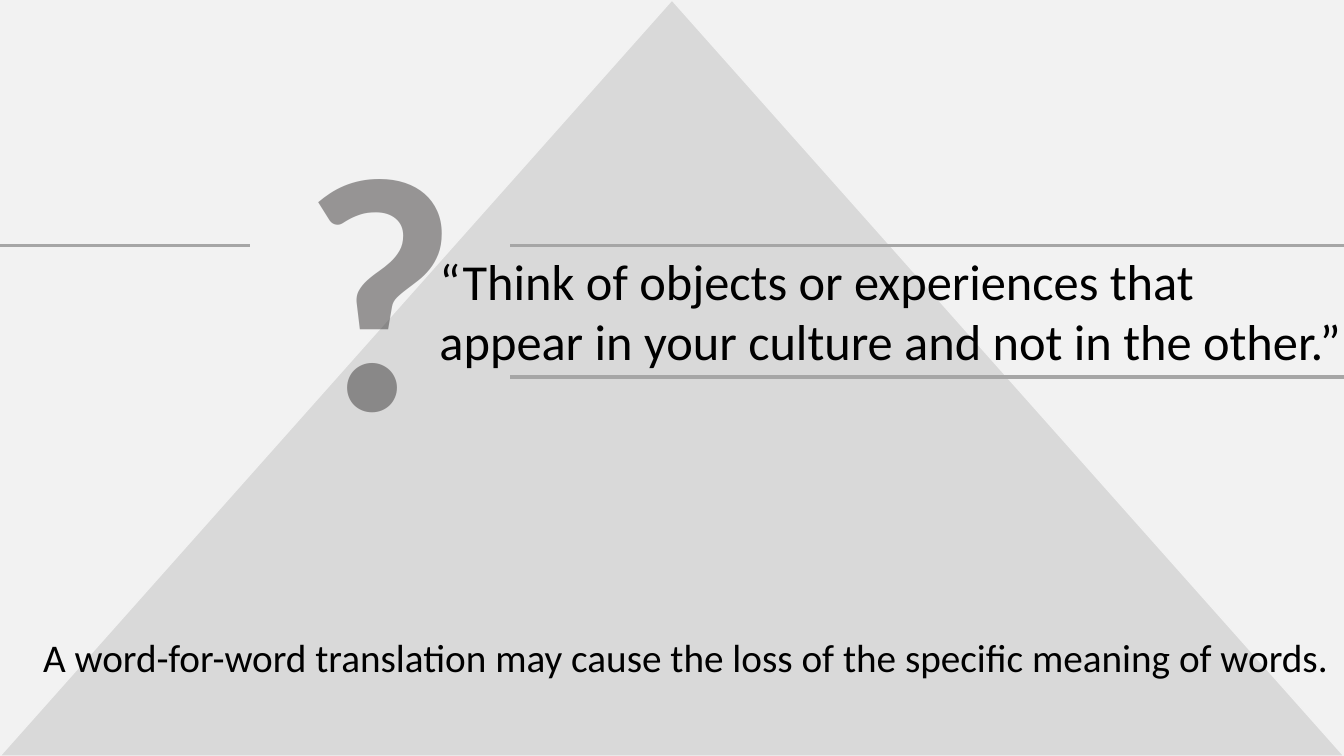
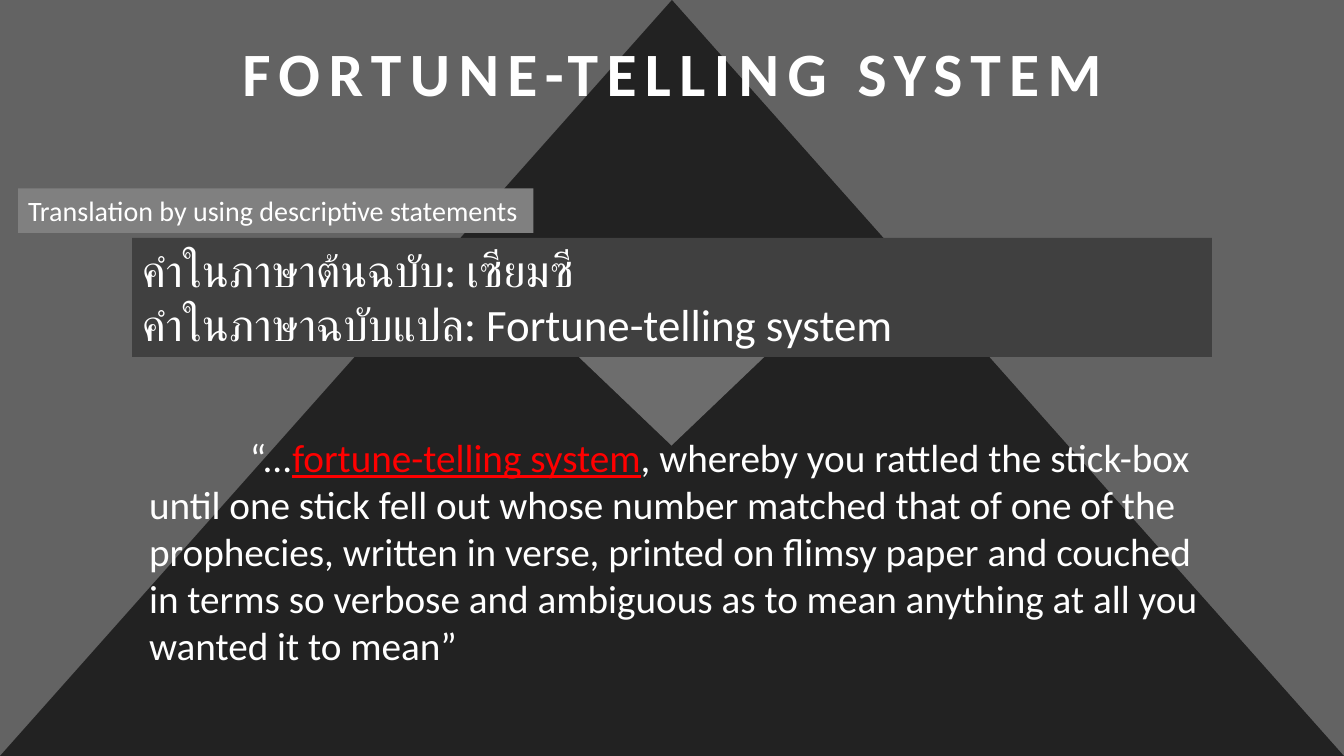
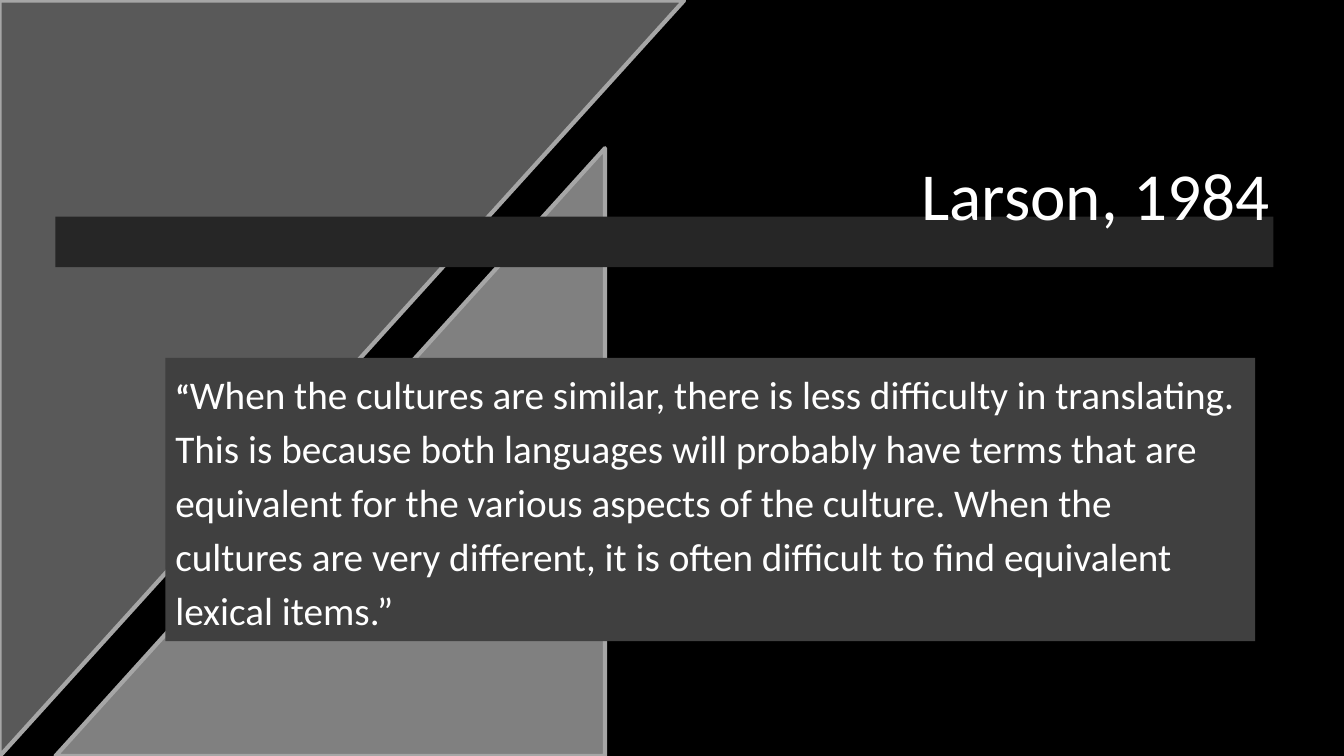
from dataclasses import dataclass

from lxml import etree
from pptx import Presentation
from pptx.dml.color import RGBColor
from pptx.enum import shapes, text
from pptx.oxml.ns import qn
from pptx.util import Inches, Pt

TRIANGLE = shapes.MSO_SHAPE.ISOSCELES_TRIANGLE
RECTANGLE = shapes.MSO_SHAPE.RECTANGLE
RIGHT_TRIANGLE_APEX = 0
WIDTH, HEIGHT = 13.33, 7.5
TITLE_ONLY, BLANK = 5, 6


@dataclass(frozen=True)
class Theme:
    font: str = "Calibri"
    black: str = "000000"
    white: str = "FFFFFF"
    red: str = "FF0000"
    question: str = "3B3838"
    paper: str = "F2F2F2"
    pale: str = "D9D9D9"
    rule: str = "A6A6A6"
    mid: str = "808080"
    slate: str = "636363"
    dark: str = "595959"
    panel: str = "404040"
    bar: str = "262626"
    mark_size: int = 239
    author_size: int = 48
    title_size: int = 44
    quote_size: int = 36
    term_size: int = 32
    body_size: int = 28
    accent_size: int = 24
    label_size: int = 20


THEME = Theme()


def add_page(deck, layout, background):
    page = deck.slides.add_slide(deck.slide_layouts[layout])
    fill = page.background.fill
    fill.solid()
    fill.fore_color.rgb = RGBColor.from_string(background)
    return page


def set_opacity(properties, percent):
    """Make the solid fill under a properties element translucent."""
    color = properties.find(qn("a:solidFill")).find(qn("a:srgbClr"))
    etree.SubElement(color, qn("a:alpha")).set("val", str(percent * 1000))


def add_block(page, kind, place, fill, line=None, line_width=1, opacity=None,
              rotation=0, apex=None):
    block = page.shapes.add_shape(kind, *map(Inches, place))
    block.shadow.inherit = False
    block.rotation = rotation
    block.fill.solid()
    block.fill.fore_color.rgb = RGBColor.from_string(fill)
    if opacity is not None:
        set_opacity(block._element.spPr, opacity)
    if apex is not None:
        block.adjustments[0] = apex
    if line:
        block.line.color.rgb = RGBColor.from_string(line)
        block.line.width = Pt(line_width)
    else:
        block.line.fill.background()
    return block


def add_rule(page, start, end, y):
    rule = page.shapes.add_connector(
        shapes.MSO_CONNECTOR.STRAIGHT, *map(Inches, (start, y, end, y)))
    rule.line.color.rgb = RGBColor.from_string(THEME.rule)
    rule.line.width = Pt(2.25)
    etree.SubElement(rule._element.spPr, qn("a:effectLst"))


def add_text_box(page, place):
    return page.shapes.add_textbox(*map(Inches, place))


def place_title(page, place):
    """Position the title placeholder and bring it to the front."""
    title = page.shapes.title
    title.left, title.top, title.width, title.height = map(Inches, place)
    page.shapes._spTree.append(title._element)
    return title


def prepare_frame(box, wrap=True):
    frame = box.text_frame
    frame.word_wrap = wrap
    frame.auto_size = text.MSO_AUTO_SIZE.NONE
    frame.vertical_anchor = text.MSO_ANCHOR.TOP
    return frame


def format_paragraph(para, align=text.PP_ALIGN.LEFT, spacing=None, after=None,
                     margin=0, indent=0):
    para.alignment = align
    if spacing:
        para.line_spacing = spacing
    if after:
        para.space_after = Pt(after)
    properties = para._p.get_or_add_pPr()
    properties.set("marL", str(Inches(margin)))
    properties.set("indent", str(Inches(indent)))


def add_span(para, words, size, color, bold=False, underline=False):
    span = para.add_run()
    span.text = words
    font = span.font
    font.name = THEME.font
    font.size = Pt(size)
    font.bold = bold
    font.underline = underline
    font.color.rgb = RGBColor.from_string(color)
    return span


def write_line(box, words, size, color, wrap=True, bold=False, **layout):
    """Fill a box with one paragraph of a single style."""
    para = prepare_frame(box, wrap).paragraphs[0]
    format_paragraph(para, **layout)
    return add_span(para, words, size, color, bold)


def build_question(deck):
    page = add_page(deck, BLANK, THEME.paper)
    add_block(page, TRIANGLE, (0, 0, WIDTH, HEIGHT), THEME.pale, THEME.paper)
    mark = write_line(add_text_box(page, (2.89, 0.7, 1.76, 4.12)), "?",
                      THEME.mark_size, THEME.question, wrap=False, bold=True,
                      align=text.PP_ALIGN.CENTER)
    set_opacity(mark._r.rPr, 50)
    for start, end, y in ((5.06, WIDTH, 2.44), (0, 2.48, 2.44),
                          (5.06, WIDTH, 3.74)):
        add_rule(page, start, end, y)
    write_line(add_text_box(page, (4.26, 2.43, 9.18, 1.31)),
               "“Think of objects or experiences that appear in your culture "
               "and not in the other.”", THEME.quote_size, THEME.black)
    write_line(add_text_box(page, (-0.17, 5.77, 13.61, 0.91)),
               "A word-for-word translation may cause the loss of the "
               "specific meaning of words.", THEME.body_size, THEME.black,
               wrap=False, spacing=2.0, after=10, margin=0.5)


def build_fortune_telling(deck):
    page = add_page(deck, TITLE_ONLY, THEME.slate)
    add_block(page, TRIANGLE, (0, 0, WIDTH, HEIGHT), THEME.black, opacity=65)
    add_block(page, TRIANGLE, (4.67, 2.52, 3.98, 1.9), THEME.mid, opacity=80,
              rotation=180)
    title = write_line(place_title(page, (2.28, 0.3, 8.78, 1.58)),
                       "FORTUNE-TELLING SYSTEM", THEME.title_size,
                       THEME.white, bold=True, align=text.PP_ALIGN.CENTER)
    title._r.rPr.set("spc", "600")

    terms = add_block(page, RECTANGLE, (1.31, 2.36, 10.71, 1.18), THEME.panel)
    frame = prepare_frame(terms)
    for para, words in (
            (frame.paragraphs[0], "คำในภาษาต้นฉบับ: เซียมซี"),
            (frame.add_paragraph(), "คำในภาษาฉบับแปล: Fortune-telling system")):
        format_paragraph(para)
        add_span(para, words, THEME.term_size, THEME.white)

    passage = add_text_box(page, (1.38, 4.25, 10.71, 2.46))
    para = prepare_frame(passage).paragraphs[0]
    format_paragraph(para, indent=1)
    add_span(para, "“...", THEME.body_size, THEME.white)
    add_span(para, "fortune-telling system", THEME.body_size, THEME.red,
             underline=True)
    add_span(para, ", whereby you rattled the stick-box until one stick fell "
             "out whose number matched that of one of the prophecies, written "
             "in verse, printed on flimsy paper and couched in terms so "
             "verbose and ambiguous as to mean anything at all you wanted it "
             "to mean”", THEME.body_size, THEME.white)

    label = add_block(page, RECTANGLE, (0.18, 1.87, 5.11, 0.44), THEME.mid)
    write_line(label, "Translation by using descriptive statements",
               THEME.label_size, THEME.white, wrap=False)


def build_larson(deck):
    page = add_page(deck, TITLE_ONLY, THEME.black)
    for place, fill, rotation in (
            ((-0.36, 0.36, 7.5, 6.79), THEME.dark, 90),
            ((0.26, 1.76, 6.03, 5.45), THEME.mid, 270)):
        add_block(page, TRIANGLE, place, fill, THEME.rule, 3,
                  rotation=rotation, apex=RIGHT_TRIANGLE_APEX)
    add_block(page, RECTANGLE, (0.55, 2.15, 12.08, 0.5), THEME.bar)
    write_line(place_title(page, (9.04, 1.47, 3.69, 0.91)), "Larson, 1984",
               THEME.author_size, THEME.white, wrap=False)
    quote = add_block(page, RECTANGLE, (1.64, 3.55, 10.81, 2.81), THEME.panel)
    para = prepare_frame(quote).paragraphs[0]
    format_paragraph(para, spacing=1.15, after=10)
    add_span(para, "“", THEME.accent_size, THEME.white, bold=True)
    add_span(para, "When the cultures are similar, there is less difficulty "
             "in translating. This is because both languages will probably "
             "have terms that are equivalent for the various aspects of the "
             "culture. When the cultures are very different, it is often "
             "difficult to find equivalent lexical items.”",
             THEME.body_size, THEME.white)


def main():
    deck = Presentation()
    deck.slide_width, deck.slide_height = Inches(WIDTH), Inches(HEIGHT)
    build_question(deck)
    build_fortune_telling(deck)
    build_larson(deck)
    deck.save("out.pptx")


if __name__ == "__main__":
    main()
